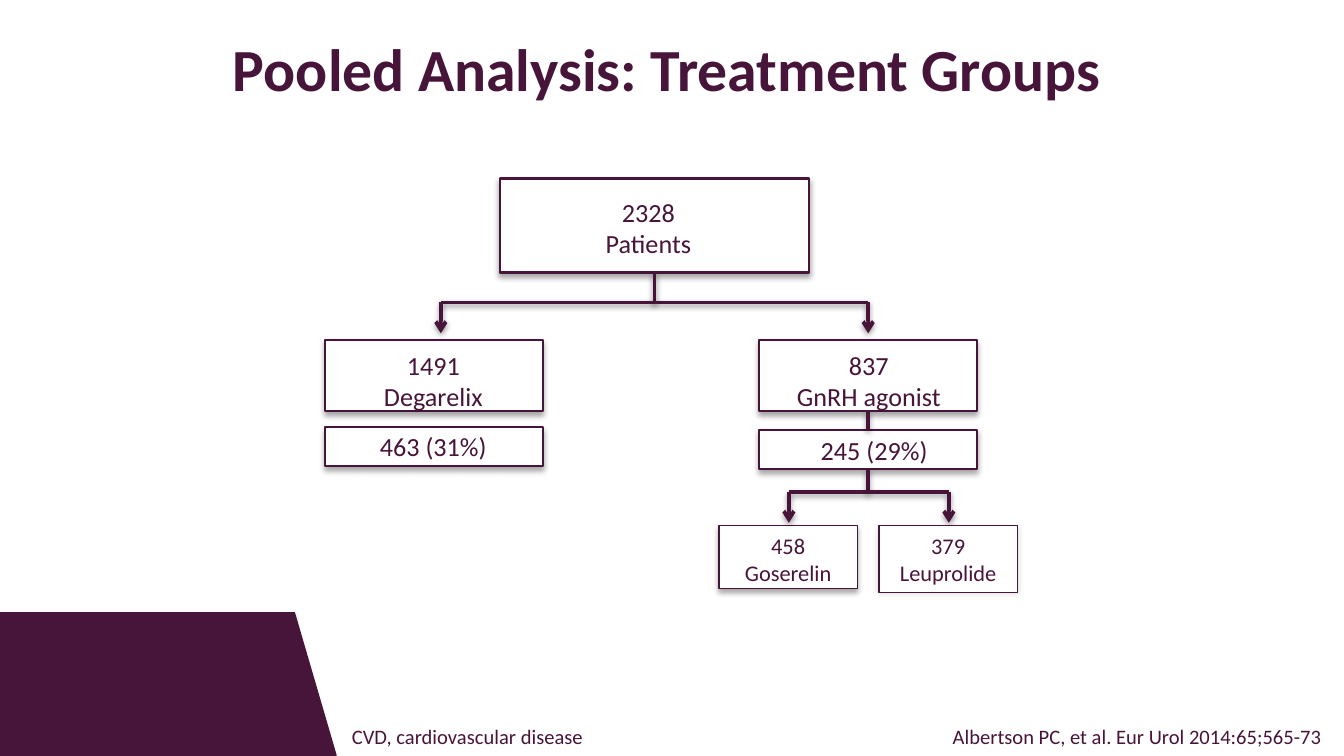
"""Build the treatment group flow chart of the pooled analysis."""
import pptx
import pptx.dml.color
import pptx.enum.shapes
import pptx.enum.text
import pptx.oxml
import pptx.oxml.ns
import pptx.util

Inches = pptx.util.Inches
Pt = pptx.util.Pt
SHAPES = pptx.enum.shapes.MSO_SHAPE
ALIGN = pptx.enum.text.PP_ALIGN

THEME = {
    "plum": pptx.dml.color.RGBColor.from_string("471539"),
    "white": pptx.dml.color.RGBColor.from_string("FFFFFF"),
    "font": "Calibri",
    "title": 32,
    "group": 14,
    "drug": 12,
    "note": 11,
    "box_shadow": (35, 1.8),
    "line_shadow": (38, 1.6),
    "connector": 2,
}

LEFT, RIGHT, WIDE = 2.42, 5.65, 1.62
GOSERELIN, LEUPROLIDE, NARROW = 5.35, 6.54, 1.03

BOXES = {
    "patients": (3.72, 1.33, 2.3, 0.7, "white", 1.5),
    "degarelix": (LEFT, 2.53, WIDE, 0.53, "white", 1),
    "agonist": (RIGHT, 2.53, WIDE, 0.53, "white", 1),
    "degarelix share": (LEFT, 3.18, WIDE, 0.29, "white", 1),
    "agonist share": (RIGHT, 3.2, WIDE, 0.29, "white", 1),
    "goserelin": (GOSERELIN, 3.91, NARROW, 0.47, "white", 0.75),
    "leuprolide": (LEUPROLIDE, 3.91, NARROW, 0.47, None, 0.75),
}

FORKS = [
    ("patients", 2.25, (3.28, 6.46), 0.23),
    ("agonist share", 3.66, (5.87, 7.06), 0.23),
]

LABELS = [
    (["Pooled Analysis: Treatment Groups"], "title", ALIGN.CENTER, (1, 0.19, 7.93, 0.64)),
    (["2328", "Patients"], "group", ALIGN.CENTER, (4.16, 1.41, 1.33, 0.57)),
    (["1491", "Degarelix"], "group", ALIGN.CENTER, (2.56, 2.55, 1.33, 0.57)),
    (["837", "GnRH agonist"], "group", ALIGN.CENTER, (5.8, 2.55, 1.33, 0.57)),
    (["463 (31%)"], "group", ALIGN.CENTER, (2.56, 3.15, 1.33, 0.34)),
    (["245 (29%)"], "group", ALIGN.CENTER, (5.84, 3.18, 1.33, 0.34)),
    (["458", "Goserelin"], "drug", ALIGN.CENTER, (GOSERELIN, 3.91, NARROW, 0.5)),
    (["379", "Leuprolide"], "drug", ALIGN.CENTER, (LEUPROLIDE, 3.91, NARROW, 0.5)),
    (["CVD, cardiovascular disease"], "note", ALIGN.LEFT, (2.52, 5.34, 1.97, 0.29)),
    (["Albertson PC, et al. Eur Urol 2014:65;565-73"], "note", ALIGN.LEFT, (6.99, 5.34, 3.01, 0.29)),
]
FRAMED = "Leuprolide"


def add_shadow(shape, opacity, distance):
    properties = shape._element.spPr
    for effects in properties.findall(pptx.oxml.ns.qn("a:effectLst")):
        properties.remove(effects)
    properties.append(pptx.oxml.parse_xml(
        f'<a:effectLst {pptx.oxml.ns.nsdecls("a")}>'
        f'<a:outerShdw blurRad="{Pt(3.1)}" dist="{Pt(distance)}" dir="5400000" rotWithShape="0">'
        f'<a:srgbClr val="000000"><a:alpha val="{opacity * 1000}"/></a:srgbClr>'
        '</a:outerShdw></a:effectLst>'))


def paint(shape, fill, weight):
    if fill:
        shape.fill.solid()
        shape.fill.fore_color.rgb = THEME[fill]
    else:
        shape.fill.background()
    shape.line.color.rgb = THEME["plum"]
    shape.line.width = Pt(weight)


def add_block(page, kind, place, fill, weight, shadow=True):
    block = page.shapes.add_shape(kind, *map(Inches, place))
    block.shadow.inherit = False
    paint(block, fill, weight)
    if shadow:
        add_shadow(block, *THEME["box_shadow"])
    return block


def add_line(page, start, end, arrow=False):
    line = page.shapes.add_connector(
        pptx.enum.shapes.MSO_CONNECTOR.STRAIGHT, *map(Inches, start + end))
    line.line.color.rgb = THEME["plum"]
    line.line.width = Pt(THEME["connector"])
    if arrow:
        line.line._get_or_add_ln().append(pptx.oxml.parse_xml(
            f'<a:tailEnd {pptx.oxml.ns.nsdecls("a")} type="arrow"/>'))
    add_shadow(line, *THEME["line_shadow"])
    return line


def add_fork(page, box, bar, tips, drop):
    middle = (box.left + box.width / 2) / Inches(1)
    bottom = (box.top + box.height) / Inches(1)
    stem = add_line(page, (middle, bottom), (middle, bar))
    stem.begin_connect(box, 2)
    for tip in tips:
        add_line(page, (middle, bar), (tip, bar))
        add_line(page, (tip, bar), (tip, bar + drop), arrow=True)


def add_label(page, lines, role, align, place):
    label = page.shapes.add_textbox(*map(Inches, place))
    if FRAMED in lines:
        paint(label, "white", 0.75)
    frame = label.text_frame
    frame.word_wrap = True
    frame.auto_size = pptx.enum.text.MSO_AUTO_SIZE.SHAPE_TO_FIT_TEXT
    frame.text = "\n".join(lines)
    for para in frame.paragraphs:
        para.alignment = align
        para.font.name = THEME["font"]
        para.font.size = Pt(THEME[role])
        para.font.bold = role == "title"
        para.font.color.rgb = THEME["plum"]


def main():
    deck = pptx.Presentation()
    deck.slide_width = Inches(10)
    deck.slide_height = deck.slide_width * 9 // 16
    page = deck.slides.add_slide(deck.slide_layouts[6])

    add_block(page, SHAPES.RECTANGLE, (0, 4.56, 2.19, 1.06), "plum", 0.75)
    add_block(page, SHAPES.RIGHT_TRIANGLE, (2.19, 4.56, 0.31, 1.06), "plum", 0.75, shadow=False)

    boxes = {name: add_block(page, SHAPES.RECTANGLE, place, fill, weight)
             for name, (*place, fill, weight) in BOXES.items()}

    link = add_line(page, (6.46, 3.06), (6.46, 3.2))
    link.begin_connect(boxes["agonist"], 2)
    link.end_connect(boxes["agonist share"], 0)
    for name, bar, tips, drop in FORKS:
        add_fork(page, boxes[name], bar, tips, drop)

    for label in LABELS:
        add_label(page, *label)
    deck.save("out.pptx")


if __name__ == "__main__":
    main()
